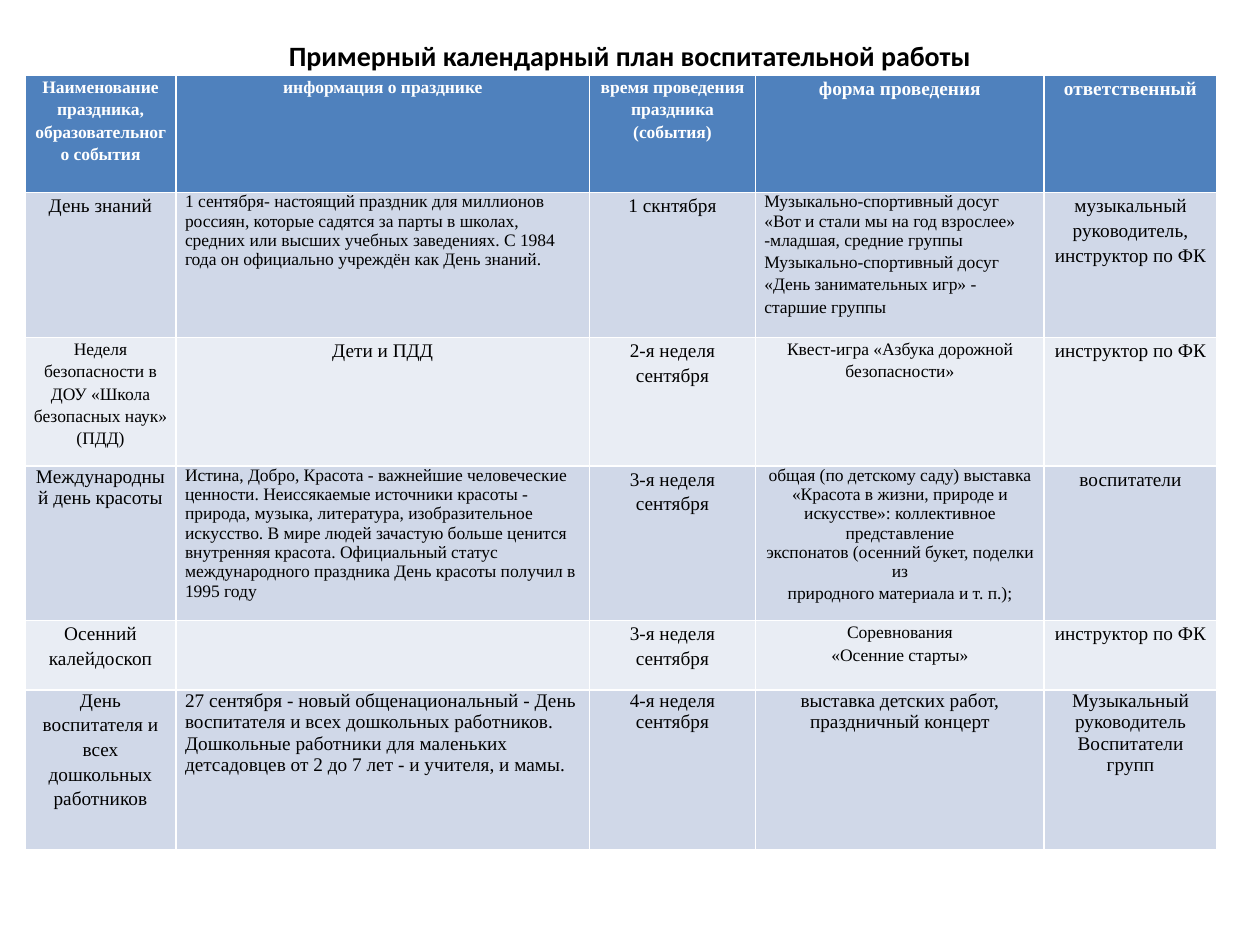
from dataclasses import dataclass
from pptx import Presentation
from pptx.dml.color import RGBColor as Rgb
from pptx.enum.text import MSO_ANCHOR as Anchor, PP_ALIGN as Align
from pptx.util import Cm, Pt


@dataclass(frozen=True)
class Theme:
    head: str = "4F81BD"
    odd: str = "D0D8E8"
    even: str = "E9EDF4"
    light: str = "FFFFFF"
    dark: str = "000000"
    title: int = 16
    big: int = 11
    small: int = 10
    sans: str = "Calibri"
    serif: str = "Times New Roman"


LOOK = Theme()
BIG, SMALL = LOOK.big, LOOK.small
FORMS = {
    "mid": {"alignment": Align.CENTER, "line_spacing": 1.15},
    "tight": {"alignment": Align.CENTER, "line_spacing": 1.0},
    "left": {"alignment": Align.LEFT, "line_spacing": 1.0},
    "loose": {"alignment": Align.LEFT, "line_spacing": 1.15},
}
TITLE = "Примерный календарный план воспитательной работы"
WIDTHS = (3.05, 8.33, 3.35, 5.82, 3.48)
HEIGHTS = (2.36, 2.92, 2.59, 3.12, 1.4, 3.23)


def mid(size, *lines):
    return size, [("mid", line) for line in lines]


def tight(size, *lines):
    return size, [("tight", line) for line in lines]


def left(size, *lines):
    return size, [("left", line) for line in lines]


ROWS = [
    [mid(SMALL, "Наименование праздника, образовательного события"),
     mid(SMALL, "информация о празднике"),
     mid(SMALL, "время проведения праздника (события)"),
     mid(BIG, "форма проведения"),
     mid(BIG, "ответственный")],
    [mid(BIG, "День знаний"),
     left(SMALL,
          "1 сентября- настоящий праздник для миллионов россиян, которые садятся за парты в школах,",
          "средних или высших учебных заведениях. С 1984 года он официально учреждён как День знаний."),
     mid(BIG, "1 скнтября"),
     (SMALL, [
         ("left", "Музыкально-спортивный досуг «Вот и стали мы на год взрослее» -младшая, средние группы"),
         ("loose", "Музыкально-спортивный досуг «День занимательных игр» - старшие группы")]),
     mid(BIG, "музыкальный руководитель, инструктор по ФК")],
    [mid(SMALL, "Неделя безопасности в ДОУ «Школа безопасных наук» (ПДД)"),
     mid(BIG, "Дети и ПДД"),
     mid(BIG, "2-я неделя сентября"),
     mid(SMALL, "Квест-игра «Азбука дорожной безопасности»"),
     mid(BIG, "инструктор по ФК")],
    [tight(BIG, "Международный день красоты"),
     left(SMALL,
          "Истина, Добро, Красота - важнейшие человеческие ценности. "
          "Неиссякаемые источники красоты - природа, музыка, литература, "
          "изобразительное искусство. В мире людей зачастую больше ценится "
          "внутренняя красота. Официальный статус международного праздника "
          "День красоты получил в 1995 году"),
     mid(BIG, "3-я неделя сентября"),
     (SMALL, [
         ("tight", "общая (по детскому саду) выставка"),
         ("tight", "«Красота в жизни, природе и искусстве»: коллективное представление"),
         ("tight", "экспонатов (осенний букет, поделки из"),
         ("mid", "природного материала и т. п.);")]),
     mid(BIG, "воспитатели")],
    [mid(BIG, "Осенний калейдоскоп"),
     mid(BIG),
     mid(BIG, "3-я неделя сентября"),
     mid(SMALL, "Соревнования", "«Осенние старты»"),
     mid(BIG, "инструктор по ФК")],
    [(BIG, [("tight", "День"),
            ("mid", "воспитателя и всех дошкольных работников")]),
     left(BIG,
          "27 сентября - новый общенациональный - День воспитателя и всех дошкольных работников.",
          "Дошкольные работники для маленьких детсадовцев от 2 до 7 лет - и учителя, и мамы."),
     tight(BIG, "4-я неделя сентября"),
     tight(BIG, "выставка детских работ, праздничный концерт"),
     tight(BIG, "Музыкальный руководитель Воспитатели групп")],
]


def apply(item, values):
    for name, value in values.items():
        setattr(item, name, value)


def write(frame, lines, size, face, tint, bold):
    for i, (form, text) in enumerate(lines):
        para = frame.add_paragraph() if i else frame.paragraphs[0]
        apply(para, FORMS[form])
        run = para.add_run()
        run.text = text
        apply(run.font, {"size": Pt(size), "name": face, "bold": bold})
        run.font.color.rgb = Rgb.from_string(tint)


def add_title(slide, box):
    frame = slide.shapes.add_textbox(*box).text_frame
    apply(frame, {"word_wrap": True, "vertical_anchor": Anchor.MIDDLE})
    write(frame, [("tight", TITLE)], LOOK.title, LOOK.sans, LOOK.dark, True)


def add_plan(slide, box):
    grid = slide.shapes.add_table(len(ROWS), len(WIDTHS), *box).table
    for col, width in zip(grid.columns, WIDTHS):
        col.width = Cm(width)
    for r, (cells, height) in enumerate(zip(ROWS, HEIGHTS)):
        grid.rows[r].height = Cm(height)
        top = r == 0
        fill = LOOK.head if top else LOOK.odd if r % 2 else LOOK.even
        tint = LOOK.light if top else LOOK.dark
        for c, (size, lines) in enumerate(cells):
            cell = grid.cell(r, c)
            apply(cell, {"margin_left": Cm(0.18), "margin_right": Cm(0.18),
                         "margin_top": 0, "margin_bottom": 0})
            cell.fill.solid()
            cell.fill.fore_color.rgb = Rgb.from_string(fill)
            write(cell.text_frame, lines, size, LOOK.serif, tint, top)


def main():
    deck = Presentation()
    apply(deck, {"slide_width": Cm(25.4), "slide_height": Cm(19.05)})
    slide = deck.slides.add_slide(deck.slide_layouts[6])
    add_title(slide, (Cm(1.27), Cm(0.53), Cm(22.86), Cm(1.19)))
    add_plan(slide, (Cm(0.5), Cm(1.52), Cm(sum(WIDTHS)), Cm(sum(HEIGHTS))))
    deck.save("out.pptx")


if __name__ == "__main__":
    main()
